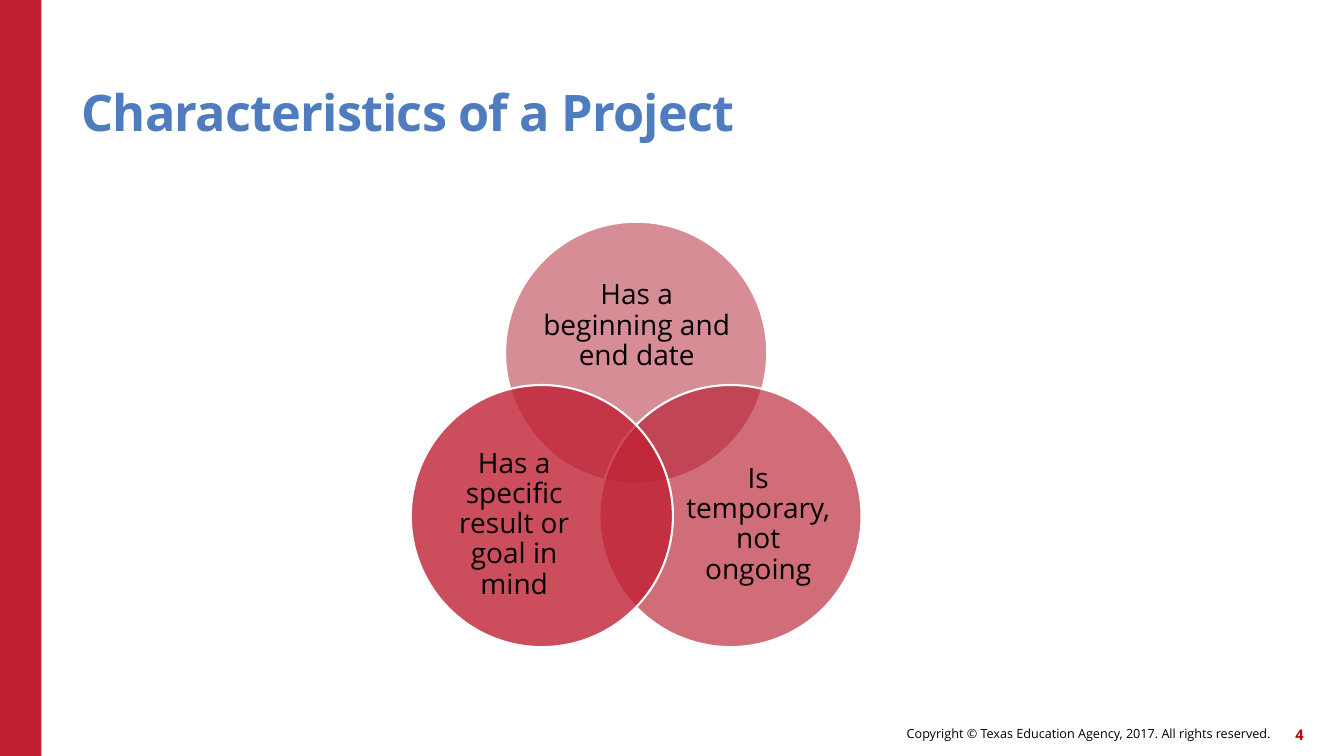
from dataclasses import dataclass
from math import cos, radians, sin

from lxml.etree import SubElement
from pptx import Presentation
from pptx.dml.color import RGBColor as RGB
from pptx.enum.shapes import MSO_SHAPE as Shape
from pptx.enum.text import MSO_ANCHOR as Anchor, PP_ALIGN as Align
from pptx.oxml.ns import qn
from pptx.util import Inches, Pt


@dataclass(frozen=True)
class Theme:
    face: str = "Open Sans"
    band: str = "C02033"
    title: str = "4E7CBE"
    ink: str = "000000"
    number: str = "C00000"
    edge: str = "FFFFFF"
    title_size: float = 36
    label_size: float = 20
    note_size: float = 9
    number_size: float = 10.5


THEME = Theme()

# Venn geometry in inches: middle of the ring, its radius, circle diameter
MID_X, MID_Y, RING, SIZE = 6.31, 4.58, 1.08, 2.6

# label, label box, angle on the ring, fill, opacity in percent
TRAITS = [
    ("Has a beginning and end date", (5.36, 2.65, 1.91, 1.17), -90, "AE1D2E", 50),
    ("Is temporary, not ongoing", (6.74, 4.49, 1.56, 1.43), 30, "B71F31", 65),
    ("Has a specific result or goal in mind", (4.32, 4.49, 1.56, 1.43), 150, "C02134", 80),
]


def style(shape, text, size, color, align, anchor=Anchor.MIDDLE, bold=False):
    """Put one paragraph of text in a shape and return the paragraph."""
    frame = shape.text_frame
    frame.word_wrap = True
    frame.vertical_anchor = anchor
    frame.margin_left = frame.margin_right = 0
    frame.margin_top = frame.margin_bottom = 0
    para = frame.paragraphs[0]
    para.text = text
    para.alignment = align
    font = para.font
    font.name, font.size, font.bold = THEME.face, Pt(size), bold
    font.color.rgb = RGB.from_string(color)
    return para


def add_text(shapes, box, *args, **kwargs):
    shape = shapes.add_textbox(*map(Inches, box))
    return style(shape, *args, **kwargs)


def add_solid(shapes, kind, box, color):
    shape = shapes.add_shape(kind, *map(Inches, box))
    shape.shadow.inherit = False
    shape.fill.solid()
    shape.fill.fore_color.rgb = RGB.from_string(color)
    shape.line.fill.background()
    return shape


def add_circle(shapes, angle, color, opacity):
    turn = radians(angle)
    left = MID_X + RING * cos(turn) - SIZE / 2
    top = MID_Y + RING * sin(turn) - SIZE / 2
    disc = add_solid(shapes, Shape.OVAL, (left, top, SIZE, SIZE), color)
    disc.line.color.rgb = RGB.from_string(THEME.edge)
    disc.line.width = Pt(1.5)
    tint = disc._element.spPr.find(qn("a:solidFill")).find(qn("a:srgbClr"))
    SubElement(tint, qn("a:alpha")).set("val", str(opacity * 1000))


def add_title(slide, text):
    title = slide.shapes.title
    title.left, title.top, title.width, title.height = map(
        Inches, (0.81, 0.45, 11, 0.96))
    para = style(title, text, THEME.title_size, THEME.title,
                 Align.LEFT, Anchor.BOTTOM, bold=True)
    para.line_spacing = 0.9
    para.runs[0]._r.get_or_add_rPr().set("spc", "-60")


def add_venn(slide):
    shapes = slide.shapes.add_group_shape().shapes
    for text, box, angle, color, opacity in TRAITS:
        add_circle(shapes, angle, color, opacity)
        para = add_text(shapes, box, text, THEME.label_size, THEME.ink, Align.CENTER)
        para.line_spacing = 0.9
        para.space_after = Pt(7)


def main():
    deck = Presentation()
    deck.slide_width, deck.slide_height = Inches(13.33), Inches(7.5)
    slide = deck.slides.add_slide(deck.slide_layouts[5])
    add_solid(slide.shapes, Shape.RECTANGLE, (0, 0, 0.41, 7.5), THEME.band)
    add_text(slide.shapes, (6.14, 7.12, 6.46, 0.32),
             "Copyright © Texas Education Agency, 2017. All rights reserved.",
             THEME.note_size, THEME.ink, Align.RIGHT)
    add_text(slide.shapes, (12.51, 7.13, 0.42, 0.32), "4",
             THEME.number_size, THEME.number, Align.RIGHT, bold=True)
    add_title(slide, "Characteristics of a Project")
    add_venn(slide)
    deck.save("out.pptx")


if __name__ == "__main__":
    main()
